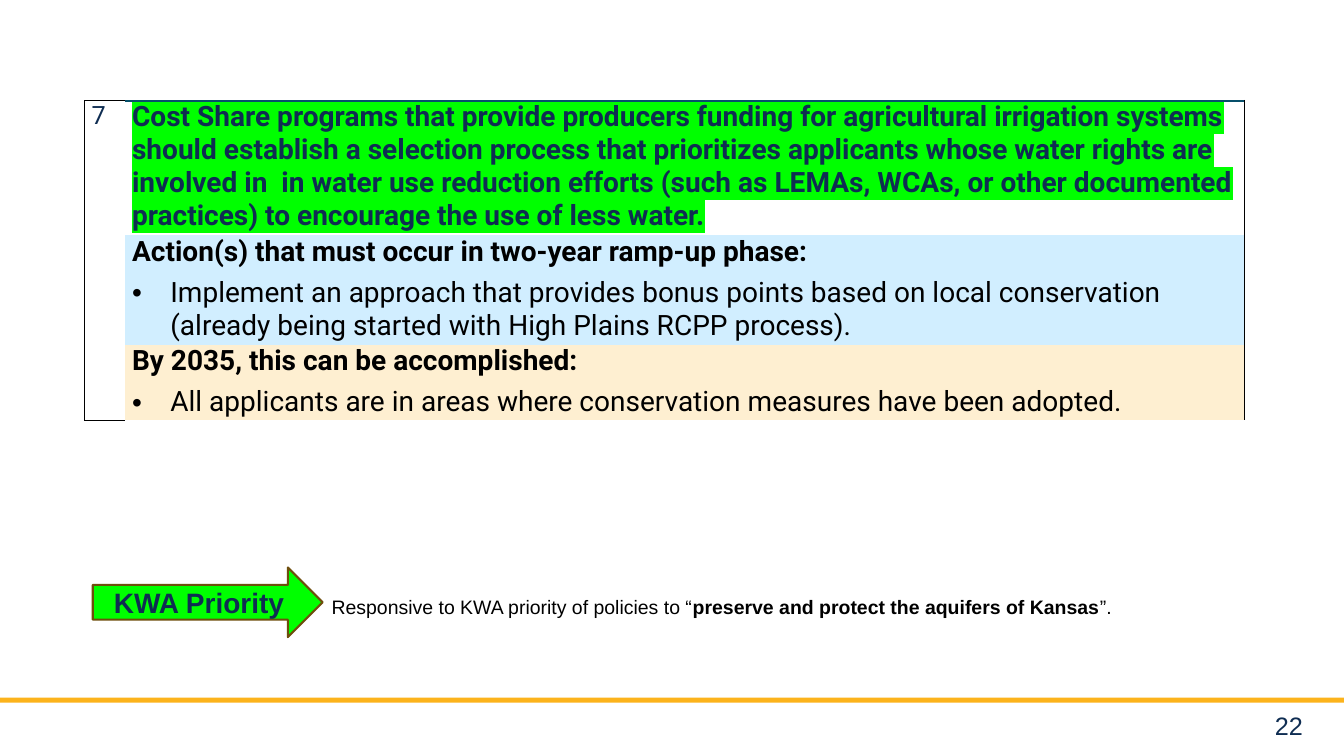
from pptx import Presentation
from pptx.dml.color import RGBColor
from pptx.enum import shapes, text
from pptx.oxml import ns, xmlchemy
from pptx.util import Inches, Pt

NAVY = RGBColor(0x0F, 0x2D, 0x52)
BLACK = RGBColor(0, 0, 0)
GREEN = RGBColor(0, 0xFF, 0)
GOLD = RGBColor(0xFC, 0xB3, 0x1C)
BROWN = RGBColor(0x6E, 0x4E, 0x0C)
TEAL = RGBColor(0x07, 0x4F, 0x6A)
LIGHT_BLUE = RGBColor(0xD1, 0xEE, 0xFF)
CREAM = RGBColor(0xFE, 0xEF, 0xD1)
NO_STYLE = "{2D5ABB26-0587-4C30-8999-92F81FD0307C}"

POLICY = (
    "Cost Share programs that provide producers funding for agricultural irrigation "
    "systems should establish a selection process that prioritizes applicants whose "
    "water rights are involved in  in water use reduction efforts (such as LEMAs, WCAs, "
    "or other documented practices) to encourage the use of less water."
)
PHASES = [
    ("Action(s) that must occur in two-year ramp-up phase:",
     "Implement an approach that provides bonus points based on local conservation "
     "(already being started with High Plains RCPP process).", LIGHT_BLUE),
    ("By 2035, this can be accomplished:",
     "All applicants are in areas where conservation measures have been adopted.", CREAM),
]


def add_element(parent, tag, **attributes):
    """Append a DrawingML element to parent and return it."""
    element = xmlchemy.OxmlElement(tag)
    for name, value in attributes.items():
        element.set(name, str(value))
    parent.append(element)
    return element


def add_run(paragraph, words, size=20, font="Roboto", color=BLACK, bold=False,
            highlight=None, baseline=None):
    run = paragraph.add_run()
    run.text = words
    run.font.size = Pt(size)
    run.font.name = font
    run.font.bold = bold
    run.font.color.rgb = color
    properties = run.font._element
    if baseline:
        properties.set("baseline", str(baseline * 1000))
    if highlight is not None:
        marker = add_element(properties, "a:highlight")
        add_element(marker, "a:srgbClr", val=highlight)
        properties.find(ns.qn("a:latin")).addprevious(marker)


def add_bullet(paragraph):
    properties = paragraph._p.get_or_add_pPr()
    properties.set("marL", str(Inches(0.38)))
    properties.set("indent", str(Inches(-0.38)))
    add_element(properties, "a:buFont", typeface="Arial")
    add_element(properties, "a:buChar", char="•")


def add_border(cell, side, color=BLACK, width=1):
    line = add_element(cell._tc.get_or_add_tcPr(), f"a:ln{side}", w=Pt(width))
    add_element(add_element(line, "a:solidFill"), "a:srgbClr", val=color)


def fill_cell(cell, fill=None):
    """Set margins and fill, and return the first paragraph."""
    cell.margin_left = cell.margin_right = Inches(0.07)
    cell.margin_top = cell.margin_bottom = 0
    if fill is None:
        cell.fill.background()
    else:
        cell.fill.solid()
        cell.fill.fore_color.rgb = fill
    paragraph = cell.text_frame.paragraphs[0]
    paragraph.space_after = Pt(6)
    return paragraph


def add_policy_table(slide):
    frame = slide.shapes.add_table(3, 2, Inches(0.84), Inches(1), Inches(11.5), Inches(3.11))
    table = frame.table
    table.first_row = table.horz_banding = False
    table._tbl.tblPr.find(ns.qn("a:tableStyleId")).text = NO_STYLE
    for column, width in zip(table.columns, (0.4, 11.1)):
        column.width = Inches(width)
    for row, height in zip(table.rows, (1.31, 1.07, 0.73)):
        row.height = Inches(height)

    # Number cell and outer borders
    number = table.cell(0, 0)
    number.merge(table.cell(2, 0))
    for side in "LTB":
        add_border(number, side)
    for row in range(3):
        add_border(table.cell(row, 1), "R")
    add_border(table.cell(0, 1), "T", TEAL, 1.5)
    add_run(fill_cell(number), "7", size=18, color=NAVY)

    # Policy and its phases
    add_run(fill_cell(table.cell(0, 1)), POLICY, color=NAVY, bold=True, highlight=GREEN)
    for row, (heading, action, fill) in enumerate(PHASES, start=1):
        cell = table.cell(row, 1)
        add_run(fill_cell(cell, fill), heading, bold=True)
        paragraph = cell.text_frame.add_paragraph()
        paragraph.space_after = Pt(6)
        add_bullet(paragraph)
        add_run(paragraph, action)


def add_block(slide, kind, left, top, width, height, fill, line=None):
    shape = slide.shapes.add_shape(kind, Inches(left), Inches(top), Inches(width), Inches(height))
    shape.shadow.inherit = False
    shape.fill.solid()
    shape.fill.fore_color.rgb = fill
    if line is None:
        shape.line.fill.background()
    else:
        shape.line.color.rgb = line
        shape.line.width = Pt(1.5)
    return shape


def add_text_box(slide, left, top, width, height):
    box = slide.shapes.add_textbox(Inches(left), Inches(top), Inches(width), Inches(height))
    box.text_frame.word_wrap = True
    return box.text_frame.paragraphs[0]


def main():
    presentation = Presentation()
    presentation.slide_width = Inches(13.33)
    presentation.slide_height = Inches(7.5)
    slide = presentation.slides.add_slide(presentation.slide_layouts[6])

    # Footer bar and page number
    add_block(slide, shapes.MSO_SHAPE.RECTANGLE, 0, 6.92, 13.33, 0.05, GOLD)
    page = add_text_box(slide, 12.08, 7, 0.94, 0.35)
    page.alignment = text.PP_ALIGN.RIGHT
    add_run(page, "22", size=18, font="Arial", color=NAVY)

    add_policy_table(slide)

    # Priority arrow and statement
    arrow = add_block(slide, shapes.MSO_SHAPE.RIGHT_ARROW, 0.92, 5.63, 2.28, 0.69, GREEN, BROWN)
    arrow.text_frame.vertical_anchor = text.MSO_ANCHOR.MIDDLE
    label = arrow.text_frame.paragraphs[0]
    label.alignment = text.PP_ALIGN.CENTER
    add_run(label, "KWA Priority", font="Arial", color=NAVY, bold=True)
    statement = add_text_box(slide, 3.19, 5.81, 9.28, 0.5)
    for words, bold in (("Responsive to KWA priority of policies to “", False),
                        ("preserve and protect the aquifers of Kansas", True),
                        ("”.", False)):
        add_run(statement, words, size=24, font="Arial", bold=bold, baseline=30)

    presentation.save("out.pptx")


if __name__ == "__main__":
    main()
